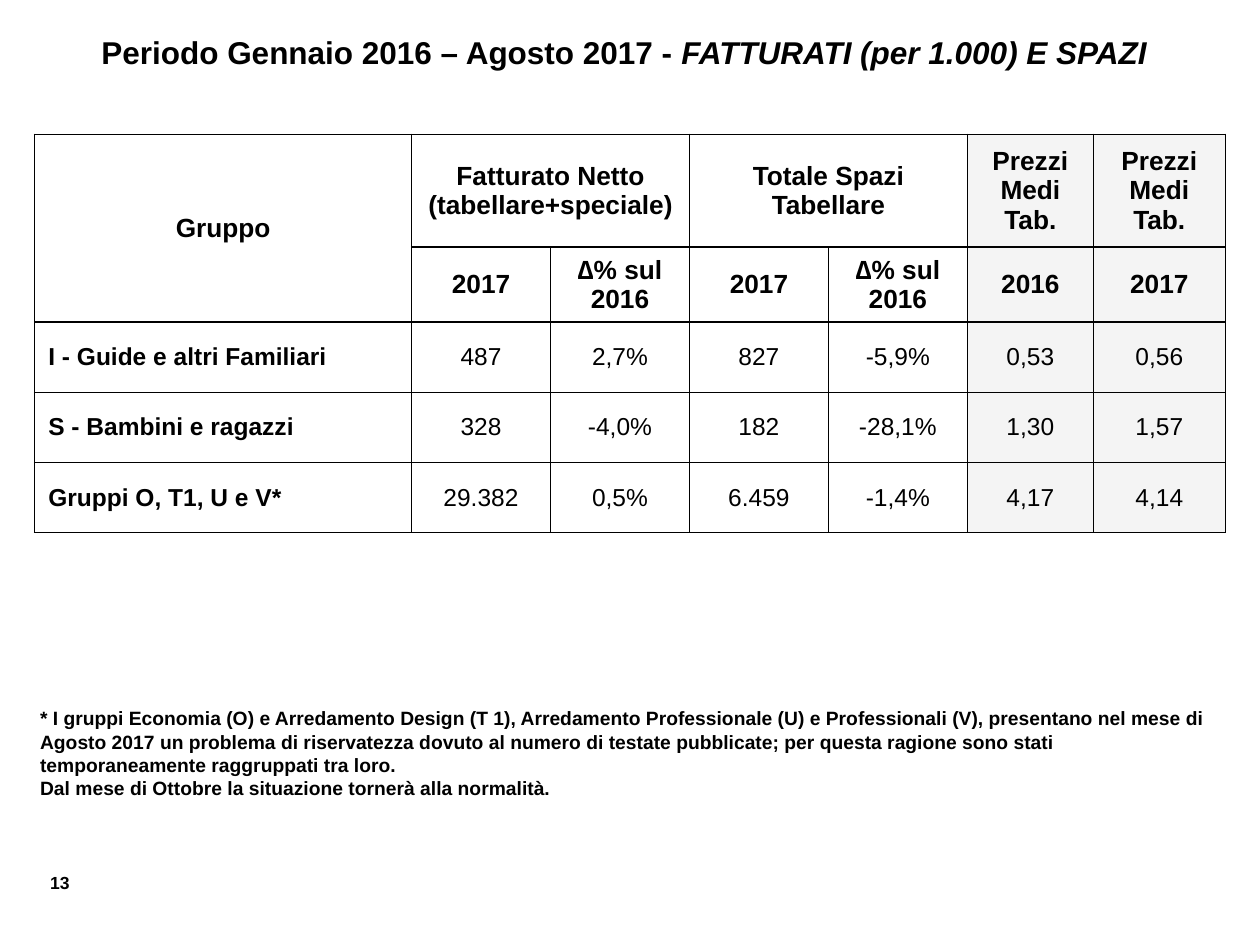
import dataclasses

import pptx
import pptx.dml.color
import pptx.enum.text
import pptx.oxml
import pptx.oxml.ns
import pptx.util

Pt = pptx.util.Pt
ALIGN = pptx.enum.text.PP_ALIGN
ANCHOR = pptx.enum.text.MSO_ANCHOR


@dataclasses.dataclass(frozen=True)
class Theme:
    font: str = "Arial"
    ink: str = "000000"
    paper: str = "FFFFFF"
    shade: str = "F2F2F2"
    shade_alpha: int = 80
    border: float = 1
    title: float = 18
    header: float = 15
    body: float = 14
    note: float = 11
    number: float = 10


THEME = Theme()

COLUMNS = [215.4] + [79.4] * 4 + [72, 75.4]
ROWS = [64.4, 43] + [40.1] * 3
SHADED_FROM = 5
HEADER_ROWS = 2
MERGES = [((0, 0), (1, 0)), ((0, 1), (0, 2)), ((0, 3), (0, 4))]
CELLS = [
    ["Gruppo", "Fatturato Netto (tabellare+speciale)", "",
     "Totale Spazi Tabellare", "", "Prezzi Medi Tab.", "Prezzi Medi Tab."],
    ["", "2017", "∆% sul 2016", "2017", "∆% sul 2016", "2016", "2017"],
    ["I - Guide e altri Familiari", "487", "2,7%", "827", "-5,9%", "0,53", "0,56"],
    ["S - Bambini e ragazzi", "328", "-4,0%", "182", "-28,1%", "1,30", "1,57"],
    ["Gruppi O, T1, U e V*", "29.382", "0,5%", "6.459", "-1,4%", "4,17", "4,14"],
]
NOTES = [
    "* I gruppi Economia (O) e Arredamento Design (T 1), Arredamento Professionale (U) "
    "e Professionali (V), presentano nel mese di Agosto 2017 un problema di riservatezza "
    "dovuto al numero di testate pubblicate; per questa ragione sono stati "
    "temporaneamente raggruppati tra loro.",
    "Dal mese di Ottobre la situazione tornerà alla normalità.",
]


def rgb(value):
    return pptx.dml.color.RGBColor.from_string(value)


def format_paragraph(p, size, align=ALIGN.LEFT, bold=True):
    p.alignment = align
    p.font.name = THEME.font
    p.font.size = Pt(size)
    p.font.bold = bold
    p.font.color.rgb = rgb(THEME.ink)


def add_title(s, plain, italic):
    title = s.shapes.title
    title.left, title.top, title.width, title.height = Pt(19.4), Pt(15.1), Pt(674.6), Pt(51)
    tf = title.text_frame
    tf.auto_size = pptx.enum.text.MSO_AUTO_SIZE.NONE
    tf.vertical_anchor = ANCHOR.TOP
    p = tf.paragraphs[0]
    p.add_run().text = plain
    r = p.add_run()
    r.text = italic
    r.font.italic = True
    format_paragraph(p, THEME.title, ALIGN.CENTER)


def add_text(s, left, top, width, height, lines, size, align=ALIGN.LEFT):
    tf = s.shapes.add_textbox(Pt(left), Pt(top), Pt(width), Pt(height)).text_frame
    tf.word_wrap = True
    for i, line in enumerate(lines):
        p = tf.add_paragraph() if i else tf.paragraphs[0]
        p.text = line
        format_paragraph(p, size, align)


def set_borders(cell):
    tc_pr = cell._tc.get_or_add_tcPr()
    for side in "LRTB":
        tc_pr.append(pptx.oxml.parse_xml(
            f'<a:ln{side} {pptx.oxml.ns.nsdecls("a")} w="{Pt(THEME.border)}">'
            f'<a:solidFill><a:srgbClr val="{THEME.ink}"/></a:solidFill></a:ln{side}>'))


def set_fill(cell, shaded):
    cell.fill.solid()
    cell.fill.fore_color.rgb = rgb(THEME.shade if shaded else THEME.paper)
    if shaded:
        color = cell._tc.tcPr.find(".//" + pptx.oxml.ns.qn("a:solidFill") + "[last()]")
        color = cell._tc.tcPr.find(pptx.oxml.ns.qn("a:solidFill"))[0]
        color.append(pptx.oxml.parse_xml(
            f'<a:alpha {pptx.oxml.ns.nsdecls("a")} val="{THEME.shade_alpha * 1000}"/>'))


def format_cell(cell, text, row, col):
    header, label = row < HEADER_ROWS, row >= HEADER_ROWS and col == 0
    set_borders(cell)
    set_fill(cell, col >= SHADED_FROM)
    cell.vertical_anchor = ANCHOR.MIDDLE
    cell.margin_left = Pt(7.2 if header else 7.8 if label else 0)
    cell.margin_right = Pt(7.2 if header else 0)
    cell.margin_top = cell.margin_bottom = Pt(3.6 if header else 0)
    p = cell.text_frame.paragraphs[0]
    p.text = text
    format_paragraph(p, THEME.header if header else THEME.body,
                     ALIGN.LEFT if label else ALIGN.CENTER, header or label)


def add_table(s, left, top):
    table = s.shapes.add_table(len(ROWS), len(COLUMNS), Pt(left), Pt(top),
                               Pt(sum(COLUMNS)), Pt(sum(ROWS))).table
    table.first_row = table.horz_banding = False
    for column, width in zip(table.columns, COLUMNS):
        column.width = Pt(width)
    for row, height in zip(table.rows, ROWS):
        row.height = Pt(height)
    for i, texts in enumerate(CELLS):
        for j, text in enumerate(texts):
            format_cell(table.cell(i, j), text, i, j)
    for first, last in MERGES:
        table.cell(*first).merge(table.cell(*last))


def main():
    prs = pptx.Presentation()
    prs.slide_width, prs.slide_height = Pt(720), Pt(540)
    s = prs.slides.add_slide(prs.slide_layouts.get_by_name("Title Only"))
    add_title(s, "Periodo Gennaio 2016 – Agosto 2017 - ", "FATTURATI (per 1.000) E SPAZI")
    add_table(s, 19.8, 76.8)
    add_text(s, 15.8, 400.3, 689.8, 74.2, NOTES, THEME.note)
    add_text(s, 13.7, 494.6, 33.1, 19.4, ["13"], THEME.number, ALIGN.RIGHT)
    prs.save("out.pptx")


if __name__ == "__main__":
    main()
